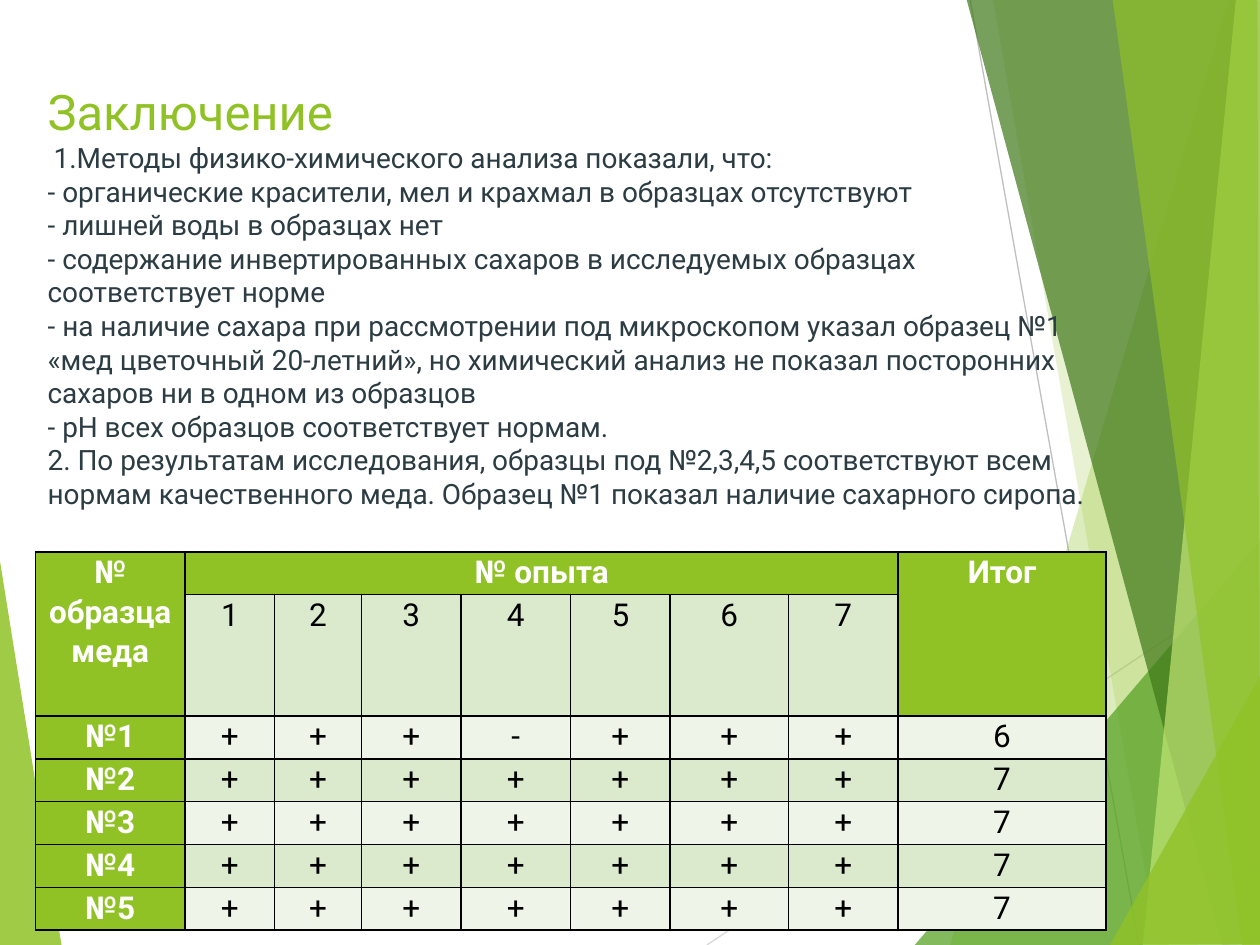
"""Build the conclusion slide: green facets, findings and a table of honey tests."""
from lxml import etree
from pptx import Presentation
from pptx import util as u
from pptx.dml import color
from pptx.enum import shapes, text
from pptx.oxml import ns

GREEN = "90C226"
BANDS = "EEF4E8", "DBE9CD"
LEAVES = [
    (GREEN, 85, [(-0.01, 4.39), (0.49, 7.51), (-0.01, 7.5)]),
    (GREEN, 30, [(9.75, 0), (7.54, 7.5), (10.02, 7.51), (10.01, 0.01)]),
    (GREEN, 20, [(7.88, -0.01), (9.19, 7.5), (10.01, 7.5), (10.01, -0.01)]),
    ("54A021", 72, [(7.26, 7.5), (10, 4.29), (10.01, 7.5)]),
    ("3F7819", 70, [(7.67, -0.01), (9.7, 7.5), (10.01, 7.49), (10.01, -0.01)]),
    ("C0E474", 70, [(9.81, -0.01), (9.07, 7.5), (10.01, 7.5), (10, -0.01)]),
    (GREEN, 65, [(8.83, -0.01), (9.86, 7.5), (10, 7.5), (9.98, -0.01)]),
    (GREEN, 80, [(8.81, 7.5), (10.01, 5.35), (10.01, 7.49)]),
]
RAYS = [("D9D9D9", (5.61, 7.5), (10.01, 4.57)), ("BFBFBF", (7.7, 0), (9.04, 7.5))]
NOTES = [
    "1.Методы физико-химического анализа показали, что:",
    "- органические красители, мел и крахмал в образцах отсутствуют",
    "- лишней воды в образцах нет",
    "- содержание инвертированных сахаров в исследуемых образцах соответствует норме",
    "- на наличие сахара при рассмотрении под микроскопом указал образец №1 "
    "«мед цветочный 20-летний», но химический анализ не показал посторонних "
    "сахаров ни в одном из образцов",
    "- рН всех образцов соответствует нормам.",
    "2. По результатам исследования, образцы под №2,3,4,5 соответствуют всем "
    "нормам качественного меда. Образец №1 показал наличие сахарного сиропа.",
]
TESTS = ["+++-+++"] + ["+" * 7] * 4
COLS = [1.19, 0.71, 0.69, 0.79, 0.87, 0.79, 0.94, 0.87, 1.65]
ROWS = [0.34, 0.94] + [0.34] * 5
MERGES = [((0, 0), (1, 0)), ((0, 1), (0, 7)), ((0, 8), (1, 8))]


def tint(code):
    return color.RGBColor.from_string(code)


def put(item, **form):
    for key, val in form.items():
        setattr(item, key, val)


class Deck:
    def __init__(self, wide, high):
        self.show = Presentation()
        put(self.show, slide_width=u.Inches(wide), slide_height=u.Inches(high))
        self.slide = self.show.slides.add_slide(self.show.slide_layouts[6])
        self.font = {"name": "Roboto", "bold": False}

    def style(self, font, size, code, **form):
        put(font, **{**self.font, "size": u.Pt(size), **form})
        font.color.rgb = tint(code)

    def leaf(self, code, alpha, spots):
        first, *rest = [(u.Inches(x), u.Inches(y)) for x, y in spots]
        form = self.slide.shapes.build_freeform(*first)
        form.add_line_segments(rest, close=True)
        shape = form.convert_to_shape()
        shape.shadow.inherit = False
        shape.fill.solid()
        shape.fill.fore_color.rgb = tint(code)
        shape.line.fill.background()
        tone = shape.fill._xPr.find(".//" + ns.qn("a:srgbClr"))
        etree.SubElement(tone, ns.qn("a:alpha"), val=str(alpha * 1000))

    def ray(self, code, start, end):
        ends = [u.Inches(v) for v in start + end]
        line = self.slide.shapes.add_connector(shapes.MSO_CONNECTOR.STRAIGHT, *ends)
        line.line.width = u.Pt(0.75)
        line.line.color.rgb = tint(code)
        etree.SubElement(line._element.spPr, ns.qn("a:effectLst"))

    def words(self, box, lines):
        frame = self.slide.shapes.add_textbox(*map(u.Inches, box)).text_frame
        put(frame, word_wrap=True, vertical_anchor=text.MSO_ANCHOR.TOP)
        para = frame.paragraphs[0]
        for spot, runs in enumerate(lines):
            if spot:
                para.add_line_break()
            for words, size, code in runs:
                run = para.add_run()
                run.text = words
                self.style(run.font, size, code)

    def edge(self, cell):
        props = cell._tc.get_or_add_tcPr()
        for side in "LRTB":
            line = etree.SubElement(props, ns.qn(f"a:ln{side}"), w=str(u.Pt(1)))
            fill = etree.SubElement(line, ns.qn("a:solidFill"))
            etree.SubElement(fill, ns.qn("a:srgbClr"), val="000000")

    def cell(self, cell, words, code, head):
        self.edge(cell)
        put(cell, margin_left=u.Inches(0.07), margin_right=u.Inches(0.07),
            margin_top=0, margin_bottom=0)
        cell.fill.solid()
        cell.fill.fore_color.rgb = tint(code)
        para = cell.text_frame.paragraphs[0]
        put(para, alignment=text.PP_ALIGN.CENTER, line_spacing=1.07)
        self.style(para.font, 18, "FFFFFF" if head else "000000", bold=head)
        if words:
            run = para.add_run()
            run.text = words
            self.style(run.font, 18, "FFFFFF" if head else "000000", bold=head)

    def grid(self, left, top, cols, rows, data, merges):
        box = map(u.Inches, (left, top, sum(cols), sum(rows)))
        table = self.slide.shapes.add_table(len(rows), len(cols), *box).table
        for col, wide in zip(table.columns, cols):
            col.width = u.Inches(wide)
        for row, high in zip(table.rows, rows):
            row.height = u.Inches(high)
        for r, line in enumerate(data):
            for c, words in enumerate(line):
                head = r == 0 or c == 0 or (r, c) == (1, len(cols) - 1)
                self.cell(table.cell(r, c), words, GREEN if head else BANDS[r % 2], head)
        for start, end in merges:
            table.cell(*start).merge(table.cell(*end))


def main():
    deck = Deck(10, 7.5)
    deck.leaf(*LEAVES[0])
    for ray in RAYS:
        deck.ray(*ray)
    for leaf in LEAVES[1:]:
        deck.leaf(*leaf)

    ink = "2C3C43"
    lines = [[("Заключение", 28, GREEN)]] + [[(note, 16, ink)] for note in NOTES]
    lines[1].insert(0, (" ", 14, ink))
    deck.words((0.28, 0.6, 8.43, 1.83), lines)

    data = [["№ образца меда", "№ опыта"] + [""] * 6 + ["Итог"], ["", *"1234567", ""]]
    for num, marks in enumerate(TESTS, 1):
        data.append([f"№{num}", *marks, str(marks.count("+"))])
    deck.grid(0.28, 4.38, COLS, ROWS, data, MERGES)
    deck.show.save("out.pptx")


if __name__ == "__main__":
    main()
